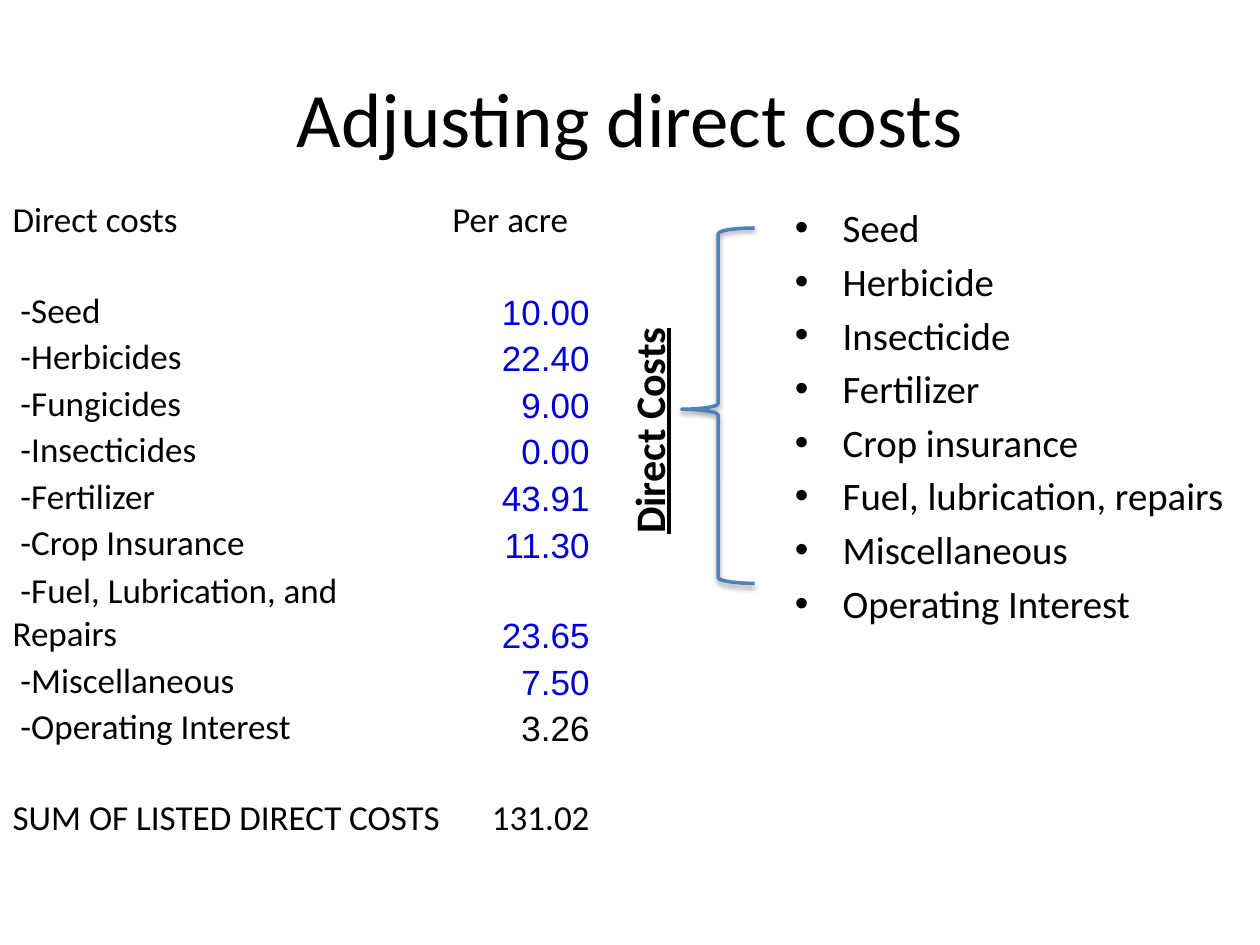
from lxml import etree
from pptx import Presentation
from pptx.dml.color import RGBColor
from pptx.enum import shapes, text
from pptx.oxml import ns
from pptx.util import Inches, Pt

BLACK = RGBColor(0x00, 0x00, 0x00)
INPUT_BLUE = RGBColor(0x00, 0x00, 0xD4)
BRACE_BLUE = RGBColor(0x4F, 0x81, 0xBD)

LINE_HEIGHT, TALL_HEIGHT = 0.37, 0.72
COST_ROWS = [
    (" -Seed", "10.00"),
    (" -Herbicides", "22.40"),
    (" -Fungicides", "9.00"),
    (" -Insecticides", "0.00"),
    (" -Fertilizer", "43.91"),
    (" -Crop Insurance", "11.30"),
    (" -Fuel, Lubrication, and Repairs", "23.65"),
    (" -Miscellaneous", "7.50"),
    (" -Operating Interest", "3.26"),
]
TALL_ROWS = {1, 7, 10}
COST_ITEMS = [
    "Seed", "Herbicide", "Insecticide", "Fertilizer", "Crop insurance",
    "Fuel, lubrication, repairs", "Miscellaneous", "Operating Interest",
]


def write_text(paragraph, content, size=20, font="Calibri", color=BLACK,
               bold=False, underline=False, align=text.PP_ALIGN.LEFT):
    paragraph.alignment = align
    run = paragraph.add_run()
    run.text = content
    run.font.size = Pt(size)
    run.font.name = font
    run.font.color.rgb = color
    run.font.bold = bold
    run.font.underline = underline


def add_text_box(slide, left, top, width, height, anchor=text.MSO_ANCHOR.TOP):
    box = slide.shapes.add_textbox(
        Inches(left), Inches(top), Inches(width), Inches(height))
    box.text_frame.word_wrap = True
    box.text_frame.vertical_anchor = anchor
    return box


def add_bullet(paragraph, indent):
    properties = paragraph._p.get_or_add_pPr()
    properties.set("marL", str(Inches(indent)))
    properties.set("indent", str(-Inches(indent)))
    etree.SubElement(properties, ns.qn("a:buFont"), typeface="Arial")
    etree.SubElement(properties, ns.qn("a:buChar"), char="•")


def add_bullet_list(slide, items):
    frame = add_text_box(slide, 6.21, 1.57, 3.75, 3.29).text_frame
    for index, item in enumerate(items):
        paragraph = frame.add_paragraph() if index else frame.paragraphs[0]
        add_bullet(paragraph, 0.38)
        if index:
            paragraph.space_before = Pt(4)
        write_text(paragraph, item, size=22.2)


def add_brace(slide):
    brace = slide.shapes.add_shape(
        shapes.MSO_SHAPE.LEFT_BRACE,
        Inches(5.41), Inches(1.81), Inches(0.58), Inches(2.82))
    brace.adjustments[0] = 0.08
    brace.adjustments[1] = 0.51
    brace.fill.background()
    brace.line.color.rgb = BRACE_BLUE
    brace.line.width = Pt(2)

    # Soft shadow straight below
    brace.shadow.inherit = False
    effects = brace._element.spPr.find(ns.qn("a:effectLst"))
    shadow = etree.SubElement(
        effects, ns.qn("a:outerShdw"), blurRad=str(Pt(3.1)),
        dist=str(Pt(1.6)), dir="5400000", rotWithShape="0")
    color = etree.SubElement(shadow, ns.qn("a:srgbClr"), val=str(BLACK))
    etree.SubElement(color, ns.qn("a:alpha"), val="38000")


def write_cell(cell, content, **text_format):
    cell.fill.background()
    cell.vertical_anchor = text.MSO_ANCHOR.BOTTOM
    cell.margin_left = cell.margin_right = cell.margin_top = Inches(0.01)
    cell.margin_bottom = 0
    write_text(cell.text_frame.paragraphs[0], content, **text_format)


def add_cost_table(slide):
    right = text.PP_ALIGN.RIGHT
    rows = [("Direct costs", "Per acre", {})]
    for label, amount in COST_ROWS:
        color = BLACK if label == " -Operating Interest" else INPUT_BLUE
        rows.append((label, amount,
                     {"font": "Arial", "color": color, "align": right}))
    rows.append(("SUM OF LISTED DIRECT COSTS", "131.02", {"align": right}))

    table = slide.shapes.add_table(
        len(rows), 2, Inches(0.09), Inches(1.55),
        Inches(4.6), Inches(5.1)).table
    table.first_row = False
    table.horz_banding = False
    table.columns[0].width = Inches(3.49)
    table.columns[1].width = Inches(1.11)
    for index, (label, amount, amount_format) in enumerate(rows):
        height = TALL_HEIGHT if index in TALL_ROWS else LINE_HEIGHT
        table.rows[index].height = Inches(height)
        write_cell(table.cell(index, 0), label)
        write_cell(table.cell(index, 1), amount, **amount_format)


def main():
    presentation = Presentation()
    presentation.slide_width = Inches(10)
    presentation.slide_height = Inches(7.5)
    slide = presentation.slides.add_slide(presentation.slide_layouts[6])

    # Title
    title = add_text_box(slide, 0.5, 0.3, 9, 1.25, text.MSO_ANCHOR.MIDDLE)
    write_text(title.text_frame.paragraphs[0], "Adjusting direct costs",
               size=44, align=text.PP_ALIGN.CENTER)

    # Bracketed list of direct costs
    label = add_text_box(slide, 3.92, 2.86, 2.25, 0.7, text.MSO_ANCHOR.BOTTOM)
    label.rotation = 270
    write_text(label.text_frame.paragraphs[0], "Direct Costs",
               size=24, bold=True, underline=True)
    add_bullet_list(slide, COST_ITEMS)
    add_brace(slide)

    # Costs per acre
    add_cost_table(slide)

    presentation.save("out.pptx")


if __name__ == "__main__":
    main()
